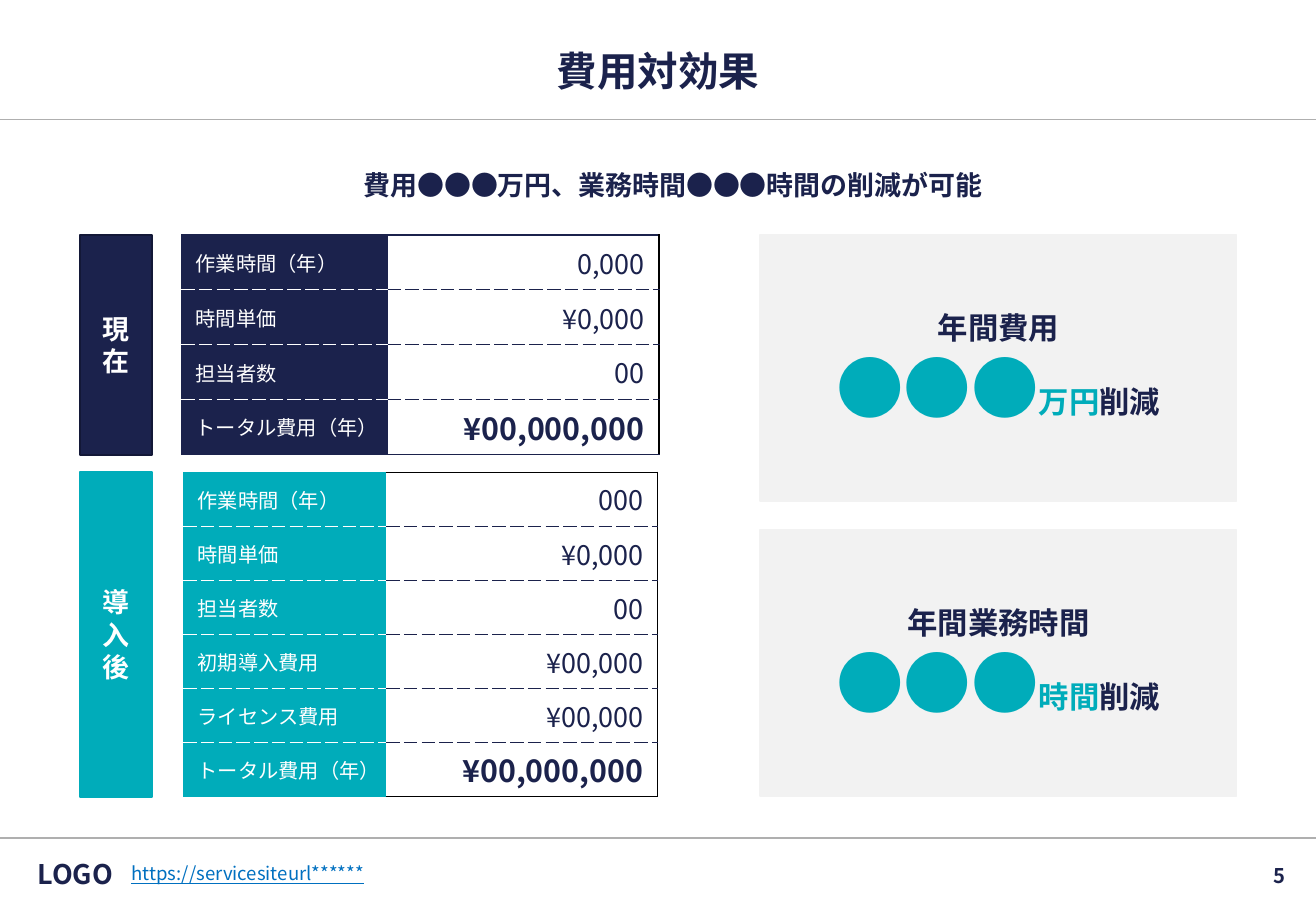
import pptx
import pptx.dml.color
import pptx.enum.shapes
import pptx.enum.text
import pptx.oxml.ns
import pptx.util
from lxml import etree

COLS, ROWS = 130, 90
UNIT = pptx.util.Inches(1 / 12)
FONT = "Noto Sans CJK JP"
NAVY, TEAL, WHITE, BLACK = "1B224C", "00ACBA", "FFFFFF", "000000"
PALE, GREY, EDGE, BLUE = "F2F2F2", "AFAFAF", "131837", "0070C0"
ALIGN = pptx.enum.text.PP_ALIGN
MIDDLE = pptx.enum.text.MSO_ANCHOR.MIDDLE
qn = pptx.oxml.ns.qn


def grid(*cells):
    """Turn counts of grid cells into lengths."""
    return [round(cell * UNIT) for cell in cells]


def tint(code):
    return pptx.dml.color.RGBColor.from_string(code)


def style(font, size, color, bold=False):
    font.name = FONT
    font.size = pptx.util.Pt(size)
    font.bold = bold
    font.color.rgb = tint(color)
    east = etree.Element(qn("a:ea"), typeface=FONT)
    font._element.find(qn("a:latin")).addnext(east)


def inset(frame, left, top, right, bottom):
    frame.margin_left, frame.margin_top, frame.margin_right, frame.margin_bottom = (
        pptx.util.Inches(side) for side in (left, top, right, bottom))


def write(para, words, size, color, bold=False, align=ALIGN.CENTER):
    para.text = words
    para.alignment = align
    style(para.font, size, color, bold)


def label(slide, box, words, size, color=NAVY, bold=True,
          align=ALIGN.CENTER, anchor=MIDDLE):
    frame = slide.shapes.add_textbox(*grid(*box)).text_frame
    frame.word_wrap = True
    frame.vertical_anchor = anchor
    inset(frame, 0.04, 0.04, 0.04, 0.04)
    para = frame.paragraphs[0]
    write(para, words, size, color, bold, align)
    return para


def rule(slide, row):
    kind = pptx.enum.shapes.MSO_CONNECTOR.STRAIGHT
    line = slide.shapes.add_connector(kind, *grid(0, row, COLS, row))
    line.line.color.rgb = tint(GREY)
    line.line.width = pptx.util.Pt(0.75)
    etree.SubElement(line._element.spPr, qn("a:effectLst"))


def block(slide, box, fill, edge):
    """Add a plain rectangle and return its text frame."""
    kind = pptx.enum.shapes.MSO_SHAPE.RECTANGLE
    shape = slide.shapes.add_shape(kind, *grid(*box))
    shape.shadow.inherit = False
    shape.fill.solid()
    shape.fill.fore_color.rgb = tint(fill)
    shape.line.color.rgb = tint(edge)
    shape.line.width = pptx.util.Pt(1)
    frame = shape.text_frame
    frame.word_wrap = True
    frame.vertical_anchor = MIDDLE
    return frame


def card(slide, box, head, unit):
    frame = block(slide, box, PALE, PALE)
    write(frame.paragraphs[0], head, 18, NAVY, True)
    para = frame.add_paragraph()
    para.alignment = ALIGN.CENTER
    for words, size, color in (("●●●", 40, TEAL), (unit, 18, TEAL), ("削減", 18, NAVY)):
        run = para.add_run()
        run.text = words
        style(run.font, size, color, True)


def border(cell, side, pen):
    """Draw one side of a cell; pen is (colour, points, dash) or None."""
    props = cell._tc.get_or_add_tcPr()
    line = etree.SubElement(props, qn("a:ln" + side))
    if pen is None:
        etree.SubElement(line, qn("a:noFill"))
        return
    color, width, dash = pen
    line.set("w", str(pptx.util.Pt(width)))
    fill = etree.SubElement(line, qn("a:solidFill"))
    etree.SubElement(fill, qn("a:srgbClr"), val=color)
    etree.SubElement(line, qn("a:prstDash"), val=dash)


def sheet(slide, left, top, widths, high, items, fill, edges):
    """Add a cost table; edges holds the outer pen of each column."""
    count = len(items)
    box = grid(left, top, sum(widths), high * count)
    table = slide.shapes.add_table(count, 2, *box).table
    for column, width in zip(table.columns, grid(*widths)):
        column.width = width
    for index, item in enumerate(items):
        table.rows[index].height = grid(high)[0]
        last = index == count - 1
        for col, words in enumerate(item):
            cell = table.cell(index, col)
            inner = ((WHITE, NAVY)[col], 0.5, "dash")
            border(cell, "L", None)
            border(cell, "R", (BLACK, 0.75, "solid") if col else None)
            border(cell, "T", inner if index else edges[col])
            border(cell, "B", edges[col] if last else inner)
            cell.vertical_anchor = MIDDLE
            para = cell.text_frame.paragraphs[0]
            if col:
                cell.fill.background()
                inset(cell, 0.02, 0.01, 0.12, 0.01)
                write(para, words, 18 if last else 16, NAVY, last, ALIGN.RIGHT)
            else:
                cell.fill.solid()
                cell.fill.fore_color.rgb = tint(fill)
                inset(cell, 0.12, 0.01, 0.02, 0.01)
                write(para, words, 12, WHITE, align=ALIGN.LEFT)


def main():
    deck = pptx.Presentation()
    deck.slide_width, deck.slide_height = grid(COLS, ROWS)
    slide = deck.slides.add_slide(deck.slide_layouts[6])

    for row in (11.8, 82.8):
        rule(slide, row)
    title = label(slide, (7.8, 4.9, 114.4, 4.7), "費用対効果", 24)
    title.line_spacing = 0.9
    lead = label(slide, (10.8, 15.25, 111.4, 7.5),
                 "費用●●●万円、業務時間●●●時間の削減が可能", 16,
                 anchor=pptx.enum.text.MSO_ANCHOR.TOP)
    lead.line_spacing = 1.3

    now = [("作業時間（年）", "0,000"), ("時間単価", "¥0,000"),
           ("担当者数", "00"), ("トータル費用（年）", "¥00,000,000")]
    after = [("作業時間（年）", "000"), ("時間単価", "¥0,000"),
             ("担当者数", "00"), ("初期導入費用", "¥00,000"),
             ("ライセンス費用", "¥00,000"), ("トータル費用（年）", "¥00,000,000")]
    sheet(slide, 17.9, 23.2, (20.4, 26.8), 5.43, now, NAVY,
          [(NAVY, 1, "solid")] * 2)
    sheet(slide, 18.1, 46.65, (20.05, 26.85), 5.34, after, TEAL,
          [(TEAL, 0.5, "solid"), (BLACK, 0.75, "solid")])

    for words, top, high, fill, edge in (("現在", 23.2, 21.75, NAVY, EDGE),
                                         ("導入後", 46.6, 32.15, TEAL, TEAL)):
        frame = block(slide, (7.9, top, 7.1, high), fill, edge)
        write(frame.paragraphs[0], words, 16, WHITE, True)

    for index, (head, unit) in enumerate((("年間費用", "万円"), ("年間業務時間", "時間"))):
        card(slide, (75.1, 23.2 + 29.15 * index, 47.05, 26.3), head, unit)

    label(slide, (2.5, 84, 9.9, 4.7), "LOGO", 16)
    link = label(slide, (12.5, 84.7, 69, 3.1), "https://servicesiteurl******", 11,
                 BLUE, False, ALIGN.LEFT)
    link.font.underline = True
    label(slide, (98.9, 84.1, 28.6, 4.7), "5", 12, align=ALIGN.RIGHT)
    deck.save("out.pptx")


if __name__ == "__main__":
    main()
